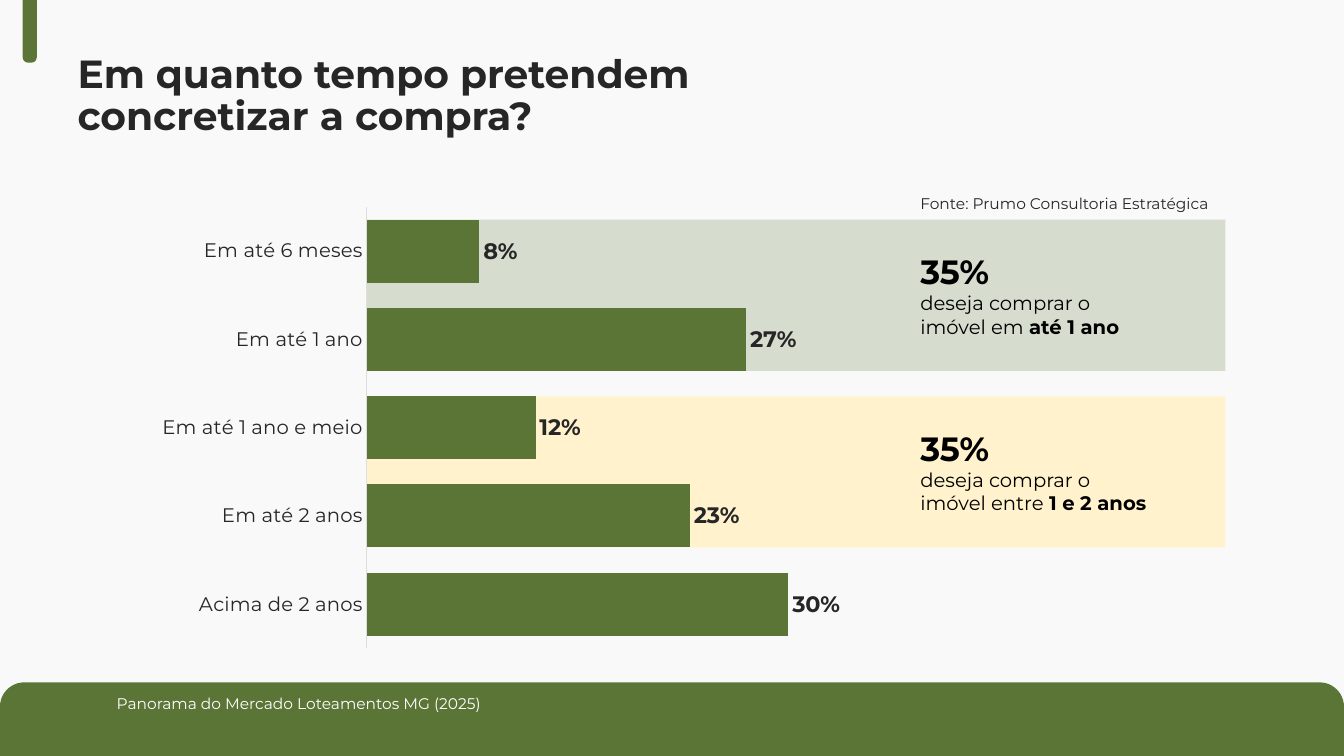
from dataclasses import dataclass

from lxml import etree
from pptx import Presentation
from pptx.chart.data import CategoryChartData
from pptx.dml.color import RGBColor
from pptx.enum.chart import XL_CHART_TYPE as Chart, XL_LABEL_POSITION as LabelPos
from pptx.enum.chart import XL_TICK_MARK as Tick
from pptx.enum.shapes import MSO_SHAPE as Shape
from pptx.enum.text import MSO_ANCHOR as Anchor
from pptx.oxml.ns import qn
from pptx.util import Inches, Pt


@dataclass(frozen=True)
class Theme:
    font: str = "Montserrat"
    paper: str = "F9F9F9"
    green: str = "5B7537"
    sage: str = "D6DCCE"
    cream: str = "FFF2CC"
    ink: str = "262626"
    black: str = "000000"
    white: str = "FFFFFF"
    axis: str = "DEDEDE"
    title: int = 28
    figure: int = 24
    value: int = 16
    body: int = 14
    note: int = 11


T = Theme()
WIDTH, HEIGHT = Inches(13.33), Inches(7.5)

# Positions are percentages of the slide's width and height
CHART_BOX = (7.73, 19.73, 67.74, 67.73)
PLOT = {"x": 0.289, "y": 0.113, "w": 0.54, "h": 0.862}
BAND_LEFT, BAND_TOP, BAND_WIDTH, BAND_HEIGHT = 27.27, 29.07, 63.9, 20
NOTE_LEFT = 67.74

ANSWERS = [
    ("Acima de 2 anos", 0.30),
    ("Em até 2 anos", 0.23),
    ("Em até 1 ano e meio", 0.12),
    ("Em até 1 ano", 0.27),
    ("Em até 6 meses", 0.08),
]
GROUPS = [
    (T.sage, "35%", "deseja comprar o imóvel em ", "até 1 ano"),
    (T.cream, "35%", "deseja comprar o imóvel entre ", "1 e 2 anos"),
]


def rgb(color):
    return RGBColor.from_string(color)


def place(x, y, w, h):
    return (int(WIDTH * x / 100), int(HEIGHT * y / 100),
            int(WIDTH * w / 100), int(HEIGHT * h / 100))


def style_font(font, size, color, bold=False):
    font.name, font.size, font.bold = T.font, Pt(size), bold
    font.color.rgb = rgb(color)


def add_block(s, box, color, kind=Shape.RECTANGLE, corners=()):
    sp = s.shapes.add_shape(kind, *place(*box))
    sp.shadow.inherit = False
    sp.fill.solid()
    sp.fill.fore_color.rgb = rgb(color)
    sp.line.fill.background()
    for i, corner in enumerate(corners):
        sp.adjustments[i] = corner


def add_text(s, box, paragraphs, anchor=Anchor.TOP, spacing=None):
    """Each paragraph is a list of runs: (text, size, color, bold)."""
    tf = s.shapes.add_textbox(*place(*box)).text_frame
    tf.word_wrap = True
    tf.vertical_anchor = anchor
    for i, runs in enumerate(paragraphs):
        p = tf.paragraphs[0] if i == 0 else tf.add_paragraph()
        if spacing:
            p.line_spacing = spacing
        for text, size, color, bold in runs:
            r = p.add_run()
            r.text = text
            style_font(r.font, size, color, bold)


def fix_plot_area(chart):
    plot_area = chart._chartSpace.chart.plotArea
    for old in plot_area.findall(qn("c:layout")):
        plot_area.remove(old)
    layout = etree.Element(qn("c:layout"))
    manual = etree.SubElement(layout, qn("c:manualLayout"))
    settings = {"layoutTarget": "inner", "xMode": "edge", "yMode": "edge", **PLOT}
    for tag, value in settings.items():
        etree.SubElement(manual, qn(f"c:{tag}")).set("val", str(value))
    plot_area.insert(0, layout)


def add_bar_chart(s, box, answers):
    data = CategoryChartData(number_format="0%")
    data.categories = [name for name, _ in answers]
    data.add_series("Series 1", [share for _, share in answers])
    chart = s.shapes.add_chart(Chart.BAR_CLUSTERED, *place(*box), data).chart
    chart.has_legend = chart.has_title = False
    style_font(chart.font, T.body, T.ink)
    fix_plot_area(chart)

    # Axes
    names, shares = chart.category_axis, chart.value_axis
    names.major_tick_mark = names.minor_tick_mark = Tick.NONE
    names.has_major_gridlines = shares.has_major_gridlines = False
    style_font(names.tick_labels.font, T.body, T.ink)
    names.format.line.color.rgb = rgb(T.axis)
    names.format.line.width = Pt(0.75)
    shares.minimum_scale, shares.maximum_scale = 0, 0.35
    shares.visible = False

    # Bars and their values
    plot = chart.plots[0]
    plot.gap_width, plot.vary_by_categories = 40, False
    fill = plot.series[0].format.fill
    fill.solid()
    fill.fore_color.rgb = rgb(T.green)
    plot.has_data_labels = True
    labels = plot.data_labels
    labels.show_value = True
    labels.number_format, labels.number_format_is_linked = "0%", False
    labels.position = LabelPos.OUTSIDE_END
    style_font(labels.font, T.value, T.ink, True)


def main():
    prs = Presentation()
    prs.slide_width, prs.slide_height = WIDTH, HEIGHT
    s = prs.slides.add_slide(prs.slide_layouts[6])
    s.background.fill.solid()
    s.background.fill.fore_color.rgb = rgb(T.paper)

    # Footer bar and top tab
    add_block(s, (0, 90.27, 100, 9.73), T.green, Shape.ROUND_2_SAME_RECTANGLE, (0.33, 0))
    add_block(s, (1.69, 0, 1.05, 8.3), T.green, Shape.ROUND_2_SAME_RECTANGLE, (0, 0.39))

    # Each band spans two of the chart's categories
    pitch = CHART_BOX[3] * PLOT["h"] * 2 / len(ANSWERS)
    tops = [BAND_TOP + i * pitch for i in range(len(GROUPS))]
    for top, (color, *_) in zip(tops, GROUPS):
        add_block(s, (BAND_LEFT, top, BAND_WIDTH, BAND_HEIGHT), color)

    add_bar_chart(s, CHART_BOX, ANSWERS)

    # Callouts on the bands
    for top, (_, figure, wish, period) in zip(tops, GROUPS):
        add_text(s, (NOTE_LEFT, top + 3.47, 18.6, 13.07), [
            [(figure, T.figure, T.black, True)],
            [(wish, T.body, T.black, False), (period, T.body, T.black, True)],
        ])

    # Title, source and footer text
    add_text(s, (5.03, 5.07, 49.29, 15.47),
             [[("Em quanto tempo pretendem concretizar a compra?", T.title, T.ink, True)]],
             Anchor.MIDDLE, 0.9)
    add_text(s, (NOTE_LEFT, 25.07, 23.41, 3.87),
             [[("Fonte: Prumo Consultoria Estratégica", T.note, T.ink, False)]])
    add_text(s, (7.95, 91.2, 52.66, 3.87),
             [[("Panorama do Mercado Loteamentos MG (2025)", T.note, T.white, False)]])

    prs.save("out.pptx")


if __name__ == "__main__":
    main()
